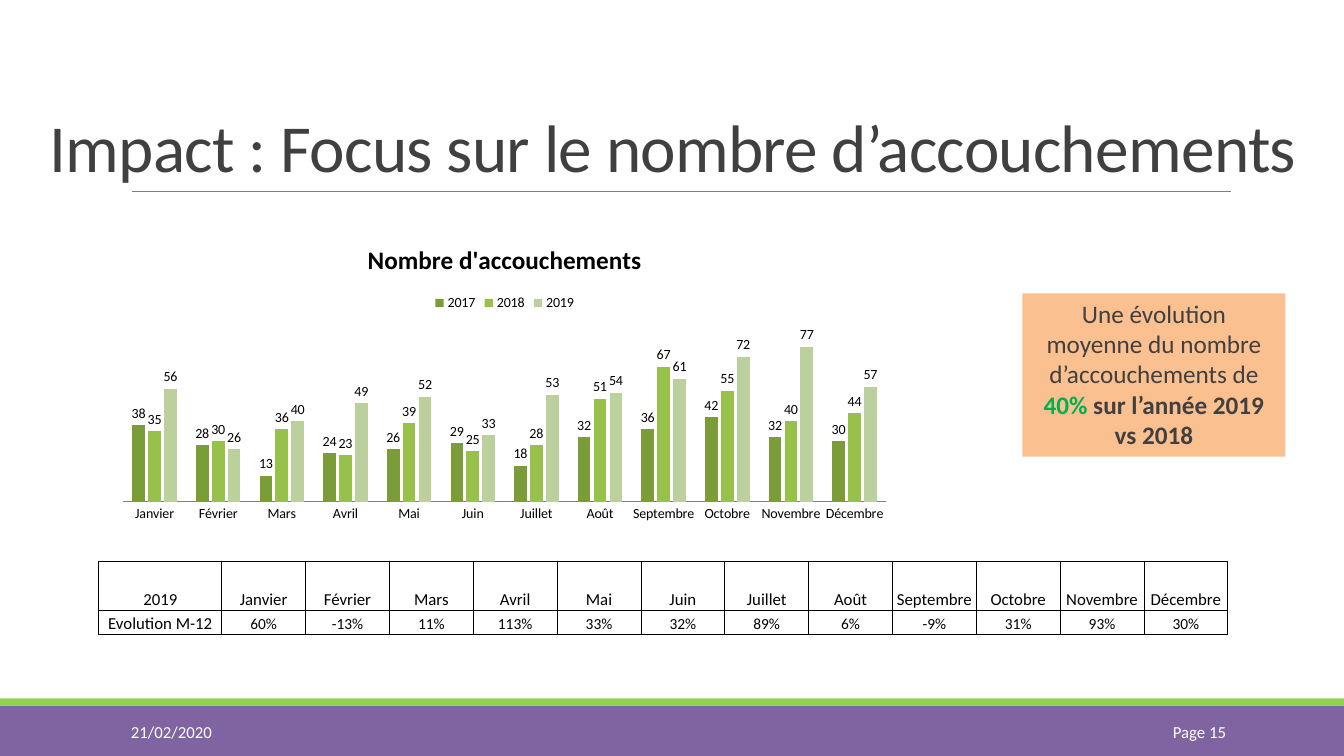
from lxml.etree import SubElement
from pptx import Presentation
from pptx.chart.data import CategoryChartData
from pptx.dml.color import RGBColor
from pptx.enum.chart import (XL_CHART_TYPE, XL_LABEL_POSITION,
                             XL_LEGEND_POSITION, XL_TICK_MARK)
from pptx.enum.shapes import MSO_CONNECTOR, MSO_SHAPE
from pptx.enum.text import MSO_ANCHOR, PP_ALIGN
from pptx.oxml import parse_xml
from pptx.oxml.ns import nsdecls, qn
from pptx.util import Inches, Pt

BLACK = RGBColor(0, 0, 0)
WHITE = RGBColor(255, 255, 255)
DARK = RGBColor(0x40, 0x40, 0x40)
GREY = RGBColor(0x80, 0x80, 0x80)
PURPLE = RGBColor(0x80, 0x64, 0xA2)
LIME = RGBColor(0x92, 0xD0, 0x50)
PEACH = RGBColor(0xFA, 0xC0, 0x90)
GREEN = RGBColor(0x00, 0xB0, 0x50)

MONTHS = ["Janvier", "Février", "Mars", "Avril", "Mai", "Juin", "Juillet",
          "Août", "Septembre", "Octobre", "Novembre", "Décembre"]
BIRTHS = {
    "2017": (38, 28, 13, 24, 26, 29, 18, 32, 36, 42, 32, 30),
    "2018": (35, 30, 36, 23, 39, 25, 28, 51, 67, 55, 40, 44),
    "2019": (56, 26, 40, 49, 52, 33, 53, 54, 61, 72, 77, 57),
}
YEAR_COLORS = [RGBColor(0x7A, 0x9D, 0x39), RGBColor(0x98, 0xC1, 0x49),
               RGBColor(0xBB, 0xD0, 0x9D)]
EVOLUTION = ["60%", "-13%", "11%", "113%", "33%", "32%", "89%", "6%", "-9%",
             "31%", "93%", "30%"]


def write(paragraph, text, size=12, color=BLACK, bold=False, align=None,
          spacing=None, font="Calibri"):
    """Add one formatted run to a paragraph."""
    run = paragraph.add_run()
    run.text = text
    run.font.name, run.font.size, run.font.bold = font, Pt(size), bold
    run.font.color.rgb = color
    if align is not None:
        paragraph.alignment = align
    if spacing is not None:
        run.font._element.set("spc", str(int(spacing * 100)))


class Deck:
    """Holds the style and the current slide."""

    def __init__(self):
        self.show = Presentation()
        self.show.slide_width = Inches(13.33)
        self.show.slide_height = Inches(7.5)
        self.slide = self.show.slides.add_slide(self.show.slide_layouts[5])
        self.shapes = self.slide.shapes

    def title(self, text, left, top, width, height):
        heading = self.shapes.title
        heading.left, heading.top = Inches(left), Inches(top)
        heading.width, heading.height = Inches(width), Inches(height)
        frame = heading.text_frame
        frame.word_wrap = True
        frame.vertical_anchor = MSO_ANCHOR.BOTTOM
        frame.paragraphs[0].line_spacing = 0.85
        write(frame.paragraphs[0], text, size=48, color=DARK,
              align=PP_ALIGN.LEFT, spacing=-0.5)

    def block(self, left, top, width, height, color):
        block = self.shapes.add_shape(
            MSO_SHAPE.RECTANGLE, Inches(left), Inches(top), Inches(width),
            Inches(height))
        block.shadow.inherit = False
        block.fill.solid()
        block.fill.fore_color.rgb = color
        block.line.fill.background()
        return block

    def rule(self, left, right, y):
        rule = self.shapes.add_connector(
            MSO_CONNECTOR.STRAIGHT, Inches(left), Inches(y), Inches(right),
            Inches(y))
        rule.line.color.rgb = GREY
        rule.line.width = Pt(0.5)
        SubElement(rule._element.spPr, qn("a:effectLst"))

    def label(self, text, left, top, width, height, align):
        frame = self.shapes.add_textbox(
            Inches(left), Inches(top), Inches(width), Inches(height)).text_frame
        frame.word_wrap = True
        frame.vertical_anchor = MSO_ANCHOR.MIDDLE
        write(frame.paragraphs[0], text, color=WHITE, align=align)

    def callout(self, parts, left, top, width, height):
        frame = self.block(left, top, width, height, PEACH).text_frame
        frame.word_wrap = True
        frame.vertical_anchor = MSO_ANCHOR.TOP
        for text, color, bold in parts:
            write(frame.paragraphs[0], text, size=18, color=color, bold=bold,
                  align=PP_ALIGN.CENTER)

    def table(self, rows, left, top, widths, heights):
        grid = self.shapes.add_table(
            len(rows), len(widths), Inches(left), Inches(top),
            Inches(sum(widths)), Inches(sum(heights))).table
        grid.first_row = grid.horz_banding = False
        for column, width in zip(grid.columns, widths):
            column.width = Inches(width)
        for r, (texts, height) in enumerate(zip(rows, heights)):
            grid.rows[r].height = Inches(height)
            for c, text in enumerate(texts):
                self.cell(grid.cell(r, c), text, size=11 if r and c else 12)

    def cell(self, cell, text, size):
        cell.margin_left = cell.margin_right = 0
        cell.margin_top = cell.margin_bottom = 0
        cell.vertical_anchor = MSO_ANCHOR.BOTTOM
        for side in ("lnL", "lnR", "lnT", "lnB"):
            cell._tc.get_or_add_tcPr().append(parse_xml(
                f'<a:{side} {nsdecls("a")} w="{Pt(0.5)}"><a:solidFill>'
                f'<a:srgbClr val="{BLACK}"/></a:solidFill></a:{side}>'))
        cell.fill.background()
        write(cell.text_frame.paragraphs[0], text, size=size,
              align=PP_ALIGN.CENTER)

    def column_chart(self, title, categories, series, colors, left, top,
                     width, height):
        data = CategoryChartData()
        data.categories = categories
        for name, values in series.items():
            data.add_series(name, values)
        chart = self.shapes.add_chart(
            XL_CHART_TYPE.COLUMN_CLUSTERED, Inches(left), Inches(top),
            Inches(width), Inches(height), data).chart
        chart.font.name, chart.font.size = "Calibri", Pt(10)
        chart.font.color.rgb = BLACK
        write(chart.chart_title.text_frame.paragraphs[0], title, size=18,
              bold=True)
        chart.has_legend = True
        chart.legend.position = XL_LEGEND_POSITION.TOP
        chart.legend.include_in_layout = False

        # Axes
        months = chart.category_axis
        months.major_tick_mark = XL_TICK_MARK.NONE
        months.format.line.color.rgb = GREY
        scale = chart.value_axis
        scale.minimum_scale, scale.maximum_scale = 0, 90
        scale.has_major_gridlines = False
        scale.visible = False

        # Columns
        plot = chart.plots[0]
        plot.vary_by_categories = False
        plot.gap_width, plot.overlap = 150, -25
        for year, color in zip(plot.series, colors):
            year.format.fill.solid()
            year.format.fill.fore_color.rgb = color
            year.data_labels.show_value = True
            year.data_labels.position = XL_LABEL_POSITION.OUTSIDE_END

        # Plot area, as shares of the chart
        area = chart._chartSpace.chart.plotArea
        for old in area.findall(qn("c:layout")):
            area.remove(old)
        shares = "".join(f'<c:{key} val="{value}"/>' for key, value in (
            ("layoutTarget", "inner"), ("xMode", "edge"), ("yMode", "edge"),
            ("x", 0.02), ("y", 0.31), ("w", 0.96), ("h", 0.6)))
        area.insert(0, parse_xml(
            f'<c:layout {nsdecls("c")}><c:manualLayout>{shares}'
            '</c:manualLayout></c:layout>'))


def main():
    deck = Deck()

    # Frame of the page
    deck.block(0, 7, 13.33, 0.5, PURPLE)
    deck.block(0, 6.93, 13.33, 0.07, LIME)
    deck.rule(1.31, 12.21, 1.9)
    deck.title("Impact : Focus sur le nombre d’accouchements",
               0.39, 0.89, 12.69, 1.01)
    deck.label("21/02/2020", 1.2, 7.06, 2.7, 0.4, PP_ALIGN.LEFT)
    deck.label("Page 15", 10.83, 7.06, 1.43, 0.4, PP_ALIGN.RIGHT)

    # Monthly change
    deck.table([["2019"] + MONTHS, ["Evolution M-12"] + EVOLUTION],
               0.98, 5.57, [1.22] + [9.98 / len(MONTHS)] * len(MONTHS),
               [0.48, 0.24])

    # Key message
    deck.callout([
        ("Une évolution moyenne du nombre d’accouchements de ", DARK, False),
        ("40% ", GREEN, True),
        ("sur l’année 2019 vs 2018", DARK, True),
    ], 10.14, 2.91, 2.61, 1.62)

    # Births by month
    deck.column_chart("Nombre d'accouchements", MONTHS, BIRTHS, YEAR_COLORS,
                      1.06, 2.25, 7.89, 3)

    deck.show.save("out.pptx")


if __name__ == "__main__":
    main()
